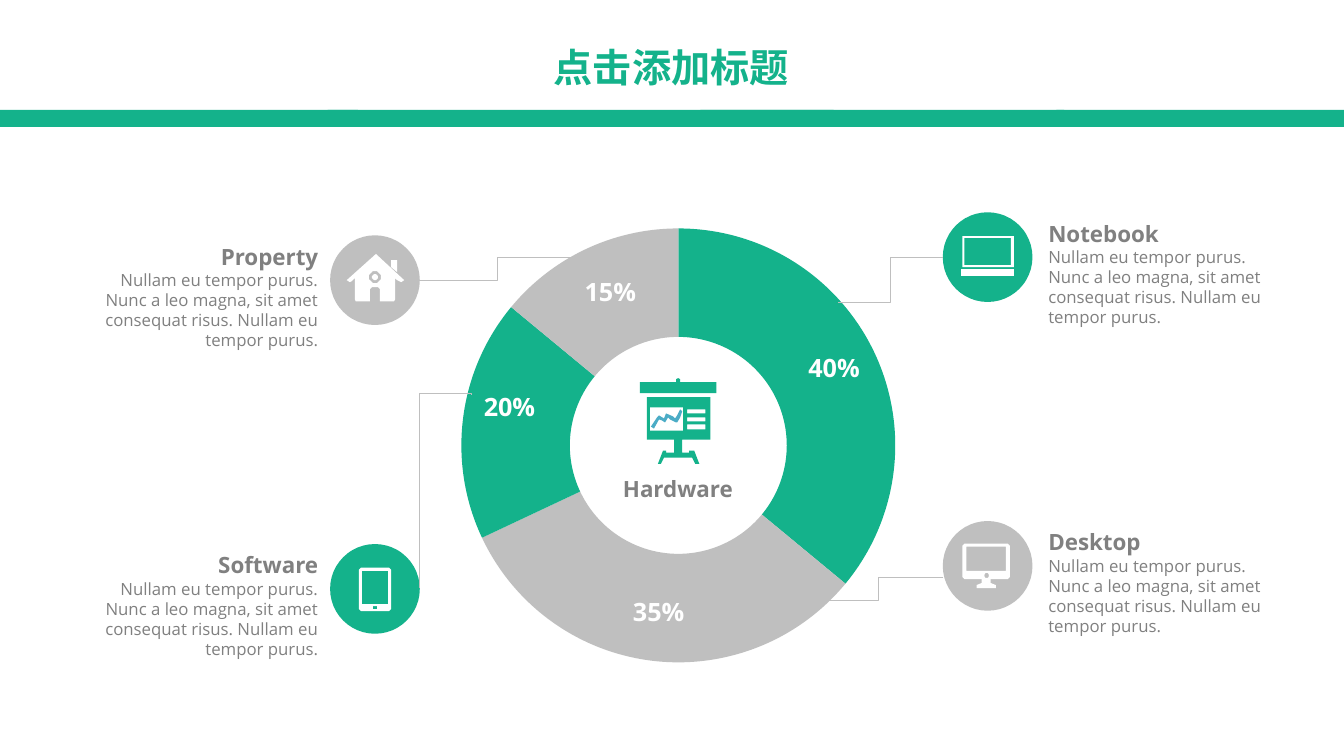
from math import cos, pi, sin

from lxml.etree import SubElement
from pptx import Presentation
from pptx.chart.data import CategoryChartData
from pptx.dml.color import RGBColor
from pptx.enum.chart import XL_CHART_TYPE
from pptx.enum.shapes import MSO_CONNECTOR, MSO_SHAPE
from pptx.enum.text import MSO_AUTO_SIZE, PP_ALIGN
from pptx.oxml.ns import qn
from pptx.util import Cm, Pt


# Icon outlines, in hundredths of an inch around the icon's centre
def box(left, top, right, bottom, cut=0):
    if not cut:
        return [(left, top), (right, top), (right, bottom), (left, bottom)]
    return [(left + cut, top), (right - cut, top), (right, top + cut), (right, bottom - cut),
            (right - cut, bottom), (left + cut, bottom), (left, bottom - cut), (left, top + cut)]


def ring(x, y, radius, steps=32):
    return [(x + radius * cos(2 * pi * i / steps), y + radius * sin(2 * pi * i / steps))
            for i in range(steps)]


# Content (positions in cm)
COLORS = {"green": "14B28B", "silver": "BFBFBF", "gray": "808080",
          "white": "FFFFFF", "blue": "4BACC6", "black": "000000"}
LATIN, CJK = "Open Sans", "Noto Sans CJK SC"
TITLE = "点击添加标题"
HUB = "Hardware"
BLURB = "Nullam eu tempor purus. Nunc a leo magna, sit amet consequat risus. Nullam eu tempor purus."

BANDS = [(0, 9.02), (8.26, 12.75), (17.65, 9.17), (26.62, 7.25)]  # left, width
SLICES = [("1", 36, "green"), ("2", 32, "silver"), ("3", 18, "green"), ("4", 14, "silver")]
SHARES = [("40%", 20.07, 8.79), ("15%", 14.43, 6.88),
          ("35%", 15.65, 14.94), ("20%", 11.89, 9.78)]
SIDES = {  # caption left, badge left, first badge top
    "right": (26.29, 23.76, 5.35, PP_ALIGN.LEFT),
    "left": (1.8, 8.32, 5.93, PP_ALIGN.RIGHT),
}
ROW_STEP, BADGE, CAPTION_RISE = 7.78, 2.26, 0.57
TOPICS = [("Notebook", "right", 0, "green"), ("Desktop", "right", 1, "silver"),
          ("Property", "left", 0, "silver"), ("Software", "left", 1, "green")]
LEADERS = [  # start, end, quarter-turned
    ((10.57, 7.06), (14.48, 6.48), False),
    ((10.57, 14.83), (11.89, 9.96), True),
    ((23.77, 6.48), (21.11, 7.62), False),
    ((23.77, 14.55), (20.52, 15.14), False),
]
ICONS = {  # each icon is a list of pieces, each piece an outline followed by its holes
    "Notebook": [[box(-25, -21, 26, 10), box(-23, -19, 23, 8)], [box(-26, 12, 26, 19)]],
    "Desktop": [
        [box(-25, -22, 22, 13, cut=2), box(-21, -19, 18, 5), ring(-1, 9.5, 2.5)],
        [[(-6, 13), (-6, 17), (-11, 19), (-11, 22), (8, 22), (8, 19), (3, 17), (3, 13)]],
    ],
    "Property": [
        [[(1, -26), (-28, 0), (-25, 2), (-23, 1), (-20, -2), (-20, 19), (-19, 21), (-5, 21),
          (-5, 9), (-3, 7), (3, 7), (5, 9), (5, 21), (19, 21), (20, 19), (20, -2),
          (22, 0), (26, 2), (29, 0)], ring(0, -3, 6)],
        [[(22, -8), (22, -20), (16, -20), (16, -13)]],
        [ring(0, -3, 3)],
    ],
    "Software": [[box(-16, -21, 16, 22, cut=2), box(-13, -18, 13, 15), ring(0, 18.5, 2)]],
}
BOARD = [
    ("green", [[(-38, -63), (-2, -63), (-2, -66), (0, -67), (2, -66), (2, -63), (38, -63),
                (38, -52), (-38, -52)]]),
    ("green", [[(32, -6), (32, -48), (-31, -48), (-31, -6), (-4, -6), (-4, 7), (-12, 7),
                (-12, 5), (-15, 5), (-20, 18), (-17, 18), (-14, 12), (14, 12), (17, 18),
                (21, 18), (16, 5), (11, 5), (11, 7), (4, 7), (4, -6)],
               box(9, -36, 27, -32), box(9, -28, 27, -24), box(9, -21, 27, -16),
               box(-28, -38, 5, -15)]),
    ("blue", [[(-1, -30), (-3, -27), (-5, -29), (-12, -32), (-14, -27), (-19, -30), (-21, -28),
               (-27, -19), (-24, -17), (-19, -26), (-16, -25), (-13, -23), (-10, -28),
               (-8, -26), (-2, -23), (-1, -23), (2, -28), (4, -34), (2, -36)]]),
]

deck = Presentation()
deck.slide_width, deck.slide_height = Cm(33.87), Cm(19.05)
slide = deck.slides.add_slide(deck.slide_layouts[6])
shapes = slide.shapes


def rgb(name):
    return RGBColor.from_string(COLORS[name])


def paint(shape, color):
    shape.shadow.inherit = False
    shape.fill.solid()
    shape.fill.fore_color.rgb = rgb(color)
    shape.line.fill.background()


def text_frame(left, top, width, height, inset=(0.13, 0.08), grow=True):
    frame = shapes.add_textbox(Cm(left), Cm(top), Cm(width), Cm(height)).text_frame
    frame.word_wrap = True
    frame.auto_size = MSO_AUTO_SIZE.SHAPE_TO_FIT_TEXT if grow else MSO_AUTO_SIZE.NONE
    frame.margin_left = frame.margin_right = Cm(inset[0])
    frame.margin_top = frame.margin_bottom = Cm(inset[1])
    return frame


def write(frame, text, size=16, color="gray", bold=True, font=LATIN,
          align=PP_ALIGN.CENTER, spacing=None):
    paragraph = frame.add_paragraph() if frame.text else frame.paragraphs[0]
    paragraph.alignment = align
    if spacing:
        paragraph.line_spacing = spacing
    run = paragraph.add_run()
    run.text = text
    run.font.size, run.font.bold, run.font.name = Pt(size), bold, font
    run.font.color.rgb = rgb(color)
    SubElement(run.font._element, qn("a:ea")).set("typeface", font)


def draw_piece(contours, x, y, color):
    builder = shapes.build_freeform(*contours[0][0], scale=Cm(2.54) / 100)
    for number, contour in enumerate(contours):
        if number:
            builder.move_to(*contour[0])
        builder.add_line_segments(contour[1:], close=True)
    paint(builder.convert_to_shape(Cm(x), Cm(y)), color)


# Header
for left, width in BANDS:
    paint(shapes.add_shape(MSO_SHAPE.RECTANGLE, Cm(left), Cm(2.77), Cm(width), Cm(0.43)), "green")
write(text_frame(7.06, 0.97, 19.71, 2.21, inset=(0.25, 0.13), grow=False),
      TITLE, size=28, color="green", font=CJK)

# Doughnut chart
shares = CategoryChartData()
shares.categories = [name for name, _, _ in SLICES]
shares.add_series("Series 1", [value for _, value, _ in SLICES])
doughnut = shapes.add_chart(XL_CHART_TYPE.DOUGHNUT, Cm(10.26), Cm(5.36), Cm(13.67), Cm(11.73),
                            shares).chart
doughnut.has_legend = doughnut.has_title = False
doughnut.font.size, doughnut.font.name = Pt(18), CJK
doughnut.font.color.rgb = rgb("black")
plot = doughnut.plots[0]
plot.vary_by_categories = True
plot._element.find(qn("c:holeSize")).set("val", "64")
for index, (_, _, color) in enumerate(SLICES):
    look = plot.series[0].points[index].format
    look.fill.solid()
    look.fill.fore_color.rgb = rgb(color)
    look.line.fill.background()
plot_area = doughnut._chartSpace.chart.plotArea
layout = plot_area.find(qn("c:layout"))
if layout is None:
    layout = SubElement(plot_area, qn("c:layout"))
    plot_area.insert(0, layout)
manual = SubElement(layout, qn("c:manualLayout"))
for tag, value in [("layoutTarget", "inner"), ("xMode", "edge"), ("yMode", "edge"),
                   ("x", "0.1"), ("y", "0.03"), ("w", "0.8"), ("h", "0.94")]:
    SubElement(manual, qn("c:" + tag)).set("val", value)

# Topics: caption, badge and icon
for name, side, row, color in TOPICS:
    caption_left, badge_left, first_top, align = SIDES[side]
    top = first_top + row * ROW_STEP
    caption = text_frame(caption_left, top - CAPTION_RISE, 6.35, 3.02)
    write(caption, name, align=align, spacing=2.0)
    write(caption, BLURB, size=12, bold=False, align=align)
    paint(shapes.add_shape(MSO_SHAPE.OVAL, Cm(badge_left), Cm(top), Cm(BADGE), Cm(BADGE)), color)
    for piece in ICONS[name]:
        draw_piece(piece, badge_left + BADGE / 2, top + BADGE / 2, "white")

# Leader lines
for (x1, y1), (x2, y2), turned in LEADERS:
    if turned:  # lay the line flat around its middle, then turn it by 90 degrees
        mid_x, mid_y = (x1 + x2) / 2, (y1 + y2) / 2
        half_w, half_h = abs(y2 - y1) / 2, abs(x2 - x1) / 2
        x1, y1, x2, y2 = mid_x + half_w, mid_y + half_h, mid_x - half_w, mid_y - half_h
    leader = shapes.add_connector(MSO_CONNECTOR.ELBOW, Cm(x1), Cm(y1), Cm(x2), Cm(y2))
    leader.line.color.rgb, leader.line.width = rgb("silver"), Pt(0.5)
    properties = leader._element.spPr
    SubElement(properties, qn("a:effectLst"))
    if turned:
        properties.find(qn("a:xfrm")).set("rot", "5400000")
        bend = SubElement(properties.find(qn("a:prstGeom")).find(qn("a:avLst")), qn("a:gd"))
        bend.set("name", "adj1")
        bend.set("fmla", "val 101200")

# Shares on the slices and the hub
for share, left, top in SHARES:
    write(text_frame(left, top, 1.9, 0.89), share, size=18, color="white")
write(text_frame(14.86, 11.89, 4.45, 0.81), HUB)
for color, piece in BOARD:
    draw_piece(piece, 17.09, 11.23, color)

deck.save("out.pptx")
